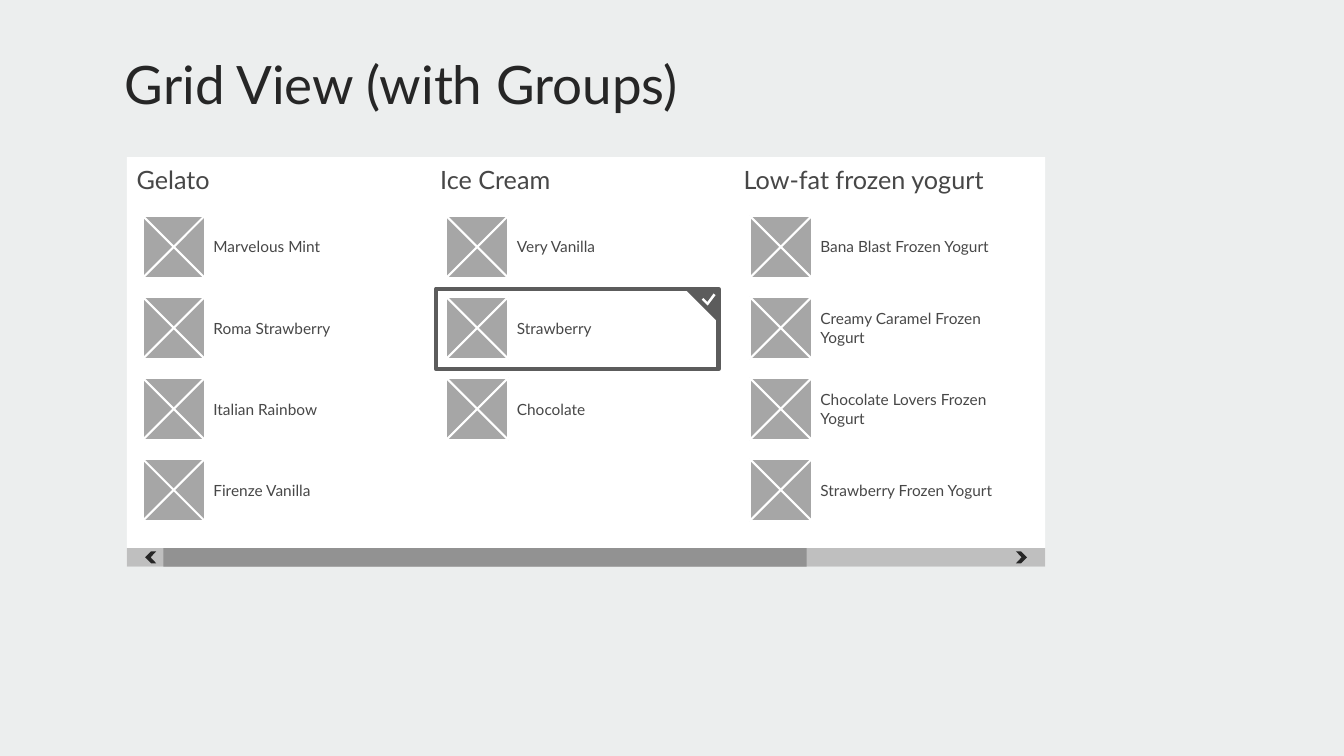
from lxml.etree import SubElement
from pptx import Presentation
from pptx.dml.color import RGBColor
from pptx.enum.shapes import MSO_CONNECTOR, MSO_SHAPE
from pptx.enum.text import MSO_ANCHOR
from pptx.oxml.ns import qn
from pptx.util import Pt

DARK, GREY, ACCENT = "262626", "474747", "5C5C5C"
WHITE, TILE, TRACK, THUMB = "FFFFFF", "A6A6A6", "BFBFBF", "929292"


def paint(shape, fill=None, line=None, width=1.5):
    """Set fill and outline (None leaves either empty) and drop the shadow."""
    shape.shadow.inherit = False
    if fill:
        shape.fill.solid()
        shape.fill.fore_color.rgb = RGBColor.from_string(fill)
    else:
        shape.fill.background()
    if line:
        shape.line.color.rgb = RGBColor.from_string(line)
        shape.line.width = Pt(width)
    else:
        shape.line.fill.background()


def write(text, left, top, width, height, size, color=GREY, inset=3,
          anchor=MSO_ANCHOR.MIDDLE, wrap=True):
    frame = slide.shapes.add_textbox(Pt(left), Pt(top), Pt(width), Pt(height)).text_frame
    frame.word_wrap = wrap
    frame.vertical_anchor = anchor
    frame.margin_left = frame.margin_right = Pt(inset)
    frame.margin_top = frame.margin_bottom = Pt(inset)
    run = frame.paragraphs[0].add_run()
    run.text = text
    run.font.name = "Lato"
    run.font.size = Pt(size)
    run.font.color.rgb = RGBColor.from_string(color)


prs = Presentation()
prs.slide_width, prs.slide_height = Pt(960), Pt(540)
slide = prs.slides.add_slide(prs.slide_layouts[6])
slide.background.fill.solid()
slide.background.fill.fore_color.rgb = RGBColor.from_string("ECEEEE")

write("Grid View (with Groups)", 82.2, 31.7, 812, 56, 37.8, DARK, inset=7.2)

# Panel and scroll bar
panel_left, panel_right, panel_top = 90.7, 746.6, 112.3
bar_top, bar_height, button = 391.5, 13.2, 26
bars = [
    (panel_left, panel_top, panel_right - panel_left, 292.4, WHITE),
    (panel_left, bar_top, panel_right - panel_left, bar_height, TRACK),
    (panel_left + button, bar_top, 459.4, bar_height, THUMB),
]
for left, top, width, height, color in bars:
    bar = slide.shapes.add_shape(MSO_SHAPE.RECTANGLE, Pt(left), Pt(top), Pt(width), Pt(height))
    paint(bar, color)

# Groups of items
groups = {
    "Gelato": ["Marvelous Mint", "Roma Strawberry", "Italian Rainbow", "Firenze Vanilla"],
    "Ice Cream": ["Very Vanilla", "Strawberry", "Chocolate"],
    "Low-fat frozen yogurt": [
        "Bana Blast Frozen Yogurt", "Creamy Caramel Frozen Yogurt",
        "Chocolate Lovers Frozen Yogurt", "Strawberry Frozen Yogurt",
    ],
}
first_column, column_pitch = 101.8, 216.8
first_row, row_pitch = 154, 57.9
tile = 44.6
for column, (heading, items) in enumerate(groups.items()):
    left = first_column + column * column_pitch
    right = left + tile
    write(heading, left - 7.2, 114.5, 180, 27, 18, anchor=MSO_ANCHOR.TOP, wrap=False)
    for row, item in enumerate(items):
        top = first_row + row * row_pitch
        bottom = top + tile
        thumbnail = slide.shapes.add_shape(
            MSO_SHAPE.RECTANGLE, Pt(left), Pt(top), Pt(tile), Pt(tile))
        paint(thumbnail, TILE, WHITE)
        for start, end in ((left, right), (right, left)):
            diagonal = slide.shapes.add_connector(
                MSO_CONNECTOR.STRAIGHT, Pt(start), Pt(bottom), Pt(end), Pt(top))
            diagonal.line.color.rgb = RGBColor.from_string(WHITE)
            diagonal.line.width = Pt(1.5)
            SubElement(diagonal._element.spPr, qn("a:effectLst"))
        write(item, right + 3, top, 139, tile, 11)

# Selected item
frame_left, frame_top, frame_width = 311.7, 206.2, 201.6
selection = slide.shapes.add_shape(
    MSO_SHAPE.RECTANGLE, Pt(frame_left), Pt(frame_top), Pt(frame_width), Pt(57.6))
paint(selection, line=ACCENT, width=3)

# Check mark cut out of the corner flag, and the scroll arrows
frame_right, flag = frame_left + frame_width, 24.4
corner = [(frame_right - flag, frame_top), (frame_right, frame_top),
          (frame_right, frame_top + flag)]
check = [(frame_right + x, frame_top + y) for x, y in
         ((-3.6, 3.3), (-8, 9.3), (-10.8, 6.5), (-12.2, 7.9), (-7.8, 12.3), (-2, 4.6))]
arrow = [(0, 4.3), (4.3, 0), (7.9, 0), (3.9, 4.3), (7.9, 8.6), (4.3, 8.6)]
arrow_top = bar_top + 2.3
arrow_left = [(panel_left + 13 + x, arrow_top + y) for x, y in arrow]
arrow_right = [(panel_right - 13 - x, arrow_top + y) for x, y in arrow]

for color, outlines in ((ACCENT, [check, corner]), (DARK, [arrow_left]), (DARK, [arrow_right])):
    contours = [[(x * 100, y * 100) for x, y in outline] for outline in outlines]
    builder = slide.shapes.build_freeform(*contours[0][0], scale=Pt(1) / 100)
    builder.add_line_segments(contours[0][1:])
    for contour in contours[1:]:
        builder.move_to(*contour[0])
        builder.add_line_segments(contour[1:])
    paint(builder.convert_to_shape(), color)

prs.save("out.pptx")
